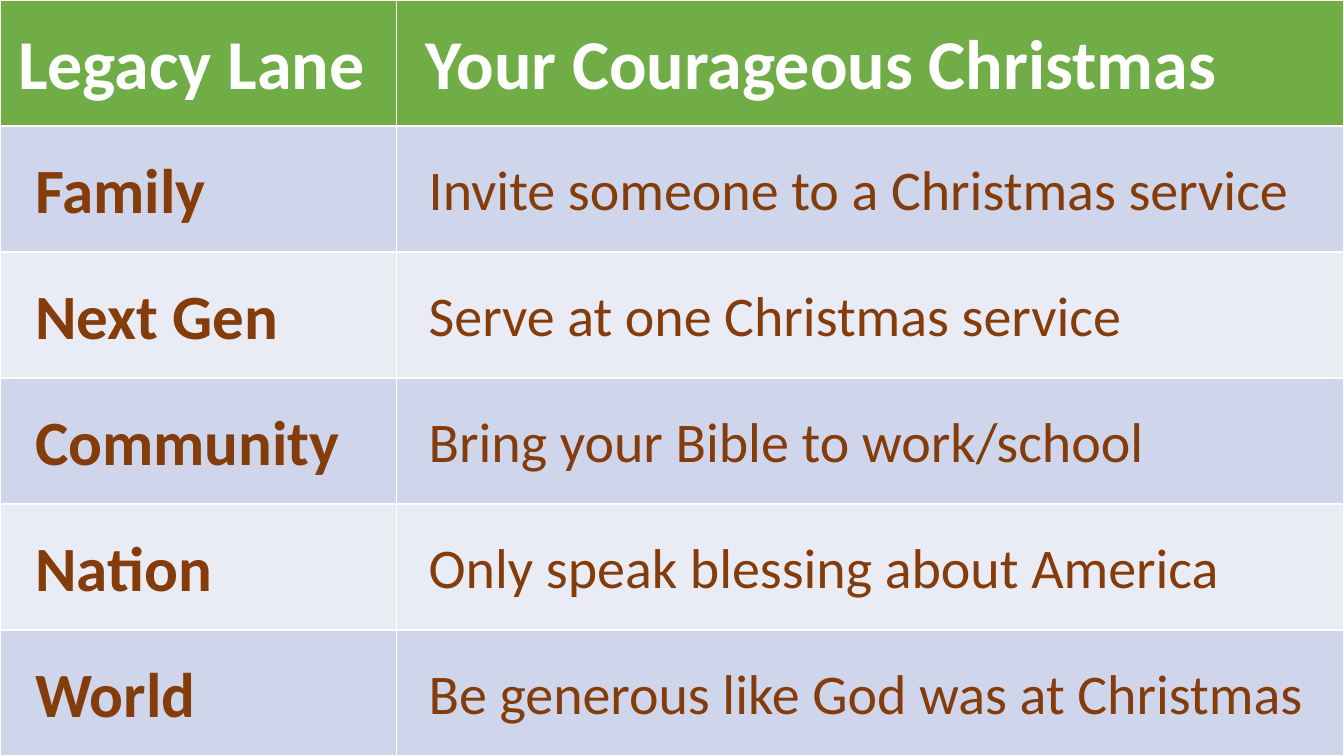
from dataclasses import dataclass

from pptx import Presentation
from pptx.dml.color import RGBColor
from pptx.enum.text import MSO_ANCHOR, PP_ALIGN
from pptx.util import Inches, Pt

MIDDLE = MSO_ANCHOR.MIDDLE
LEFT = PP_ALIGN.LEFT
BLANK_LAYOUT = 6


@dataclass(frozen=True)
class Theme:
    """Colours, type sizes and spacing of the slide."""
    font: str = "Calibri"
    header_fill: str = "70AD47"
    header_text: str = "FFFFFF"
    bands: tuple = ("CFD5EA", "E9EBF5")
    body_text: str = "843C0B"
    header_size: int = 50
    lane_size: int = 45
    action_size: int = 40
    line_spacing: float = 1.07
    side_margin: float = 0.07


THEME = Theme()
SLIDE_WIDTH, SLIDE_HEIGHT = Inches(13.33), Inches(7.5)
LANE_SHARE = 0.295
HEADERS = ("Legacy Lane", "Your Courageous Christmas")
HEADER_INDENTS = (0.18, 0.29)
LANES = (
    ("Family", "Invite someone to a Christmas service"),
    ("Next Gen", "Serve at one Christmas service"),
    ("Community", "Bring your Bible to work/school"),
    ("Nation", "Only speak blessing about America"),
    ("World", "Be generous like God was at Christmas"),
)


def write_cell(cell, text, *, fill, color, size, bold, indent):
    """Fill a cell and write one formatted line in it."""
    cell.fill.solid()
    cell.fill.fore_color.rgb = RGBColor.from_string(fill)
    cell.vertical_anchor = MIDDLE
    cell.margin_left, cell.margin_right = Inches(indent), Inches(THEME.side_margin)
    cell.margin_top = cell.margin_bottom = 0
    para = cell.text_frame.paragraphs[0]
    para.alignment = LEFT
    para.line_spacing = THEME.line_spacing
    span = para.add_run()
    span.text = text
    span.font.name = THEME.font
    span.font.size = Pt(size)
    span.font.bold = bold
    span.font.color.rgb = RGBColor.from_string(color)


def add_lane_table(page, left, top, width, height):
    """Place the table of lanes and actions in the given box."""
    row_count = len(LANES) + 1
    table = page.shapes.add_table(row_count, 2, left, top, width, height).table
    table.columns[0].width = int(width * LANE_SHARE)
    table.columns[1].width = width - table.columns[0].width
    for row in table.rows:
        row.height = height // row_count
    for column, (title, indent) in enumerate(zip(HEADERS, HEADER_INDENTS)):
        write_cell(table.cell(0, column), title, fill=THEME.header_fill,
                   color=THEME.header_text, size=THEME.header_size,
                   bold=True, indent=indent)
    for index, (lane, action) in enumerate(LANES):
        band = THEME.bands[index % len(THEME.bands)]
        write_cell(table.cell(index + 1, 0), lane, fill=band, color=THEME.body_text,
                   size=THEME.lane_size, bold=True, indent=0.35)
        write_cell(table.cell(index + 1, 1), action, fill=band, color=THEME.body_text,
                   size=THEME.action_size, bold=False, indent=0.32)


def main():
    """Build the deck and save it."""
    deck = Presentation()
    deck.slide_width, deck.slide_height = SLIDE_WIDTH, SLIDE_HEIGHT
    page = deck.slides.add_slide(deck.slide_layouts[BLANK_LAYOUT])
    add_lane_table(page, 0, 0, SLIDE_WIDTH, SLIDE_HEIGHT)
    deck.save("out.pptx")


if __name__ == "__main__":
    main()
